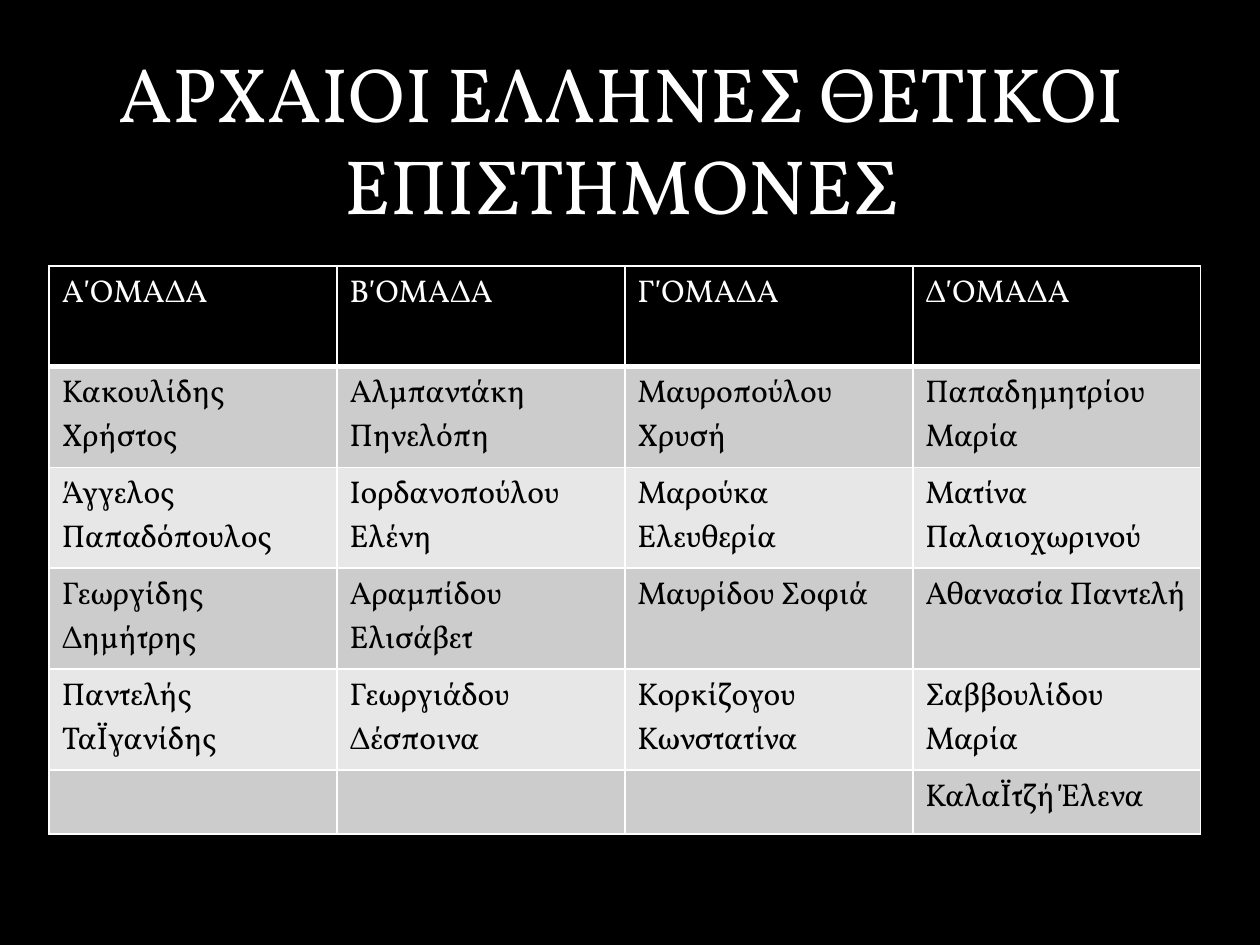
import pptx
import pptx.dml.color
import pptx.enum.text
import pptx.oxml.ns
import pptx.util
from lxml import etree

Inches = pptx.util.Inches
Pt = pptx.util.Pt
RGBColor = pptx.dml.color.RGBColor

BLACK = RGBColor(0x00, 0x00, 0x00)
WHITE = RGBColor(0xFF, 0xFF, 0xFF)
DARK_BAND = RGBColor(0xCC, 0xCC, 0xCC)
LIGHT_BAND = RGBColor(0xE7, 0xE7, 0xE7)

HEADING = "ΑΡΧΑΙΟΙ ΕΛΛΗΝΕΣ ΘΕΤΙΚΟΙ ΕΠΙΣΤΗΜΟΝΕΣ"
GROUPS = [
    ["Α΄ΟΜΑΔΑ", "Β΄ΟΜΑΔΑ", "Γ΄ΟΜΑΔΑ", "Δ΄ΟΜΑΔΑ"],
    ["Κακουλίδης Χρήστος", "Αλμπαντάκη Πηνελόπη",
     "Μαυροπούλου Χρυσή", "Παπαδημητρίου Μαρία"],
    ["Άγγελος Παπαδόπουλος", "Ιορδανοπούλου Ελένη",
     "Μαρούκα Ελευθερία", "Ματίνα Παλαιοχωρινού"],
    ["Γεωργίδης Δημήτρης", "Αραμπίδου Ελισάβετ",
     "Μαυρίδου Σοφιά", "Αθανασία Παντελή"],
    ["Παντελής ΤαΪγανίδης", "Γεωργιάδου Δέσποινα",
     "Κορκίζογου Κωνστατίνα", "Σαββουλίδου Μαρία"],
    ["", "", "", "ΚαλαΪτζή Έλενα"],
]
ROW_HEIGHTS = [0.8] * 5 + [0.51]
COLUMN_WIDTH = 2.285


class GroupSlide:
    font_name = "Vollkorn"

    def __init__(self, deck):
        self.slide = deck.slides.add_slide(deck.slide_layouts[5])
        self.slide.background.fill.solid()
        self.slide.background.fill.fore_color.rgb = BLACK

    def styled_text(self, frame, text, size, color):
        frame.text = text
        for run in frame.paragraphs[0].runs:
            run.font.name = self.font_name
            run.font.size = Pt(size)
            run.font.bold = False
            run.font.color.rgb = color

    def heading(self, text, left, top, width, height):
        title = self.slide.shapes.title
        title.left, title.top = Inches(left), Inches(top)
        title.width, title.height = Inches(width), Inches(height)
        frame = title.text_frame
        self.styled_text(frame, text, 44, WHITE)
        frame.word_wrap = True
        frame.auto_size = pptx.enum.text.MSO_AUTO_SIZE.NONE
        frame.vertical_anchor = pptx.enum.text.MSO_ANCHOR.TOP
        frame.paragraphs[0].alignment = pptx.enum.text.PP_ALIGN.CENTER

    def borders(self, cell, bottom):
        """Draw white cell borders, 1 pt except for the given bottom width."""
        qn = pptx.oxml.ns.qn
        properties = cell._tc.get_or_add_tcPr()
        for side, width in (("L", 1), ("R", 1), ("T", 1), ("B", bottom)):
            line = etree.SubElement(properties, qn("a:ln" + side), w=str(Pt(width)))
            fill = etree.SubElement(line, qn("a:solidFill"))
            etree.SubElement(fill, qn("a:srgbClr"), val=str(WHITE))

    def table(self, rows, left, top):
        grid = self.slide.shapes.add_table(
            len(rows), len(rows[0]), Inches(left), Inches(top),
            Inches(COLUMN_WIDTH * len(rows[0])), Inches(sum(ROW_HEIGHTS))).table
        for column in grid.columns:
            column.width = Inches(COLUMN_WIDTH)
        for r, names in enumerate(rows):
            grid.rows[r].height = Inches(ROW_HEIGHTS[r])
            is_header = r == 0
            band = BLACK if is_header else DARK_BAND if r % 2 else LIGHT_BAND
            for c, name in enumerate(names):
                cell = grid.cell(r, c)
                self.borders(cell, 3 if is_header else 1)
                cell.fill.solid()
                cell.fill.fore_color.rgb = band
                self.styled_text(cell.text_frame, name, 18, WHITE if is_header else BLACK)


def main():
    deck = pptx.Presentation()
    deck.slide_width, deck.slide_height = Inches(10), Inches(7.5)
    page = GroupSlide(deck)
    page.heading(HEADING, 0.23, 0.31, 9.41, 1.48)
    page.table(GROUPS, 0.39, 2.11)
    deck.save("out.pptx")


if __name__ == "__main__":
    main()
